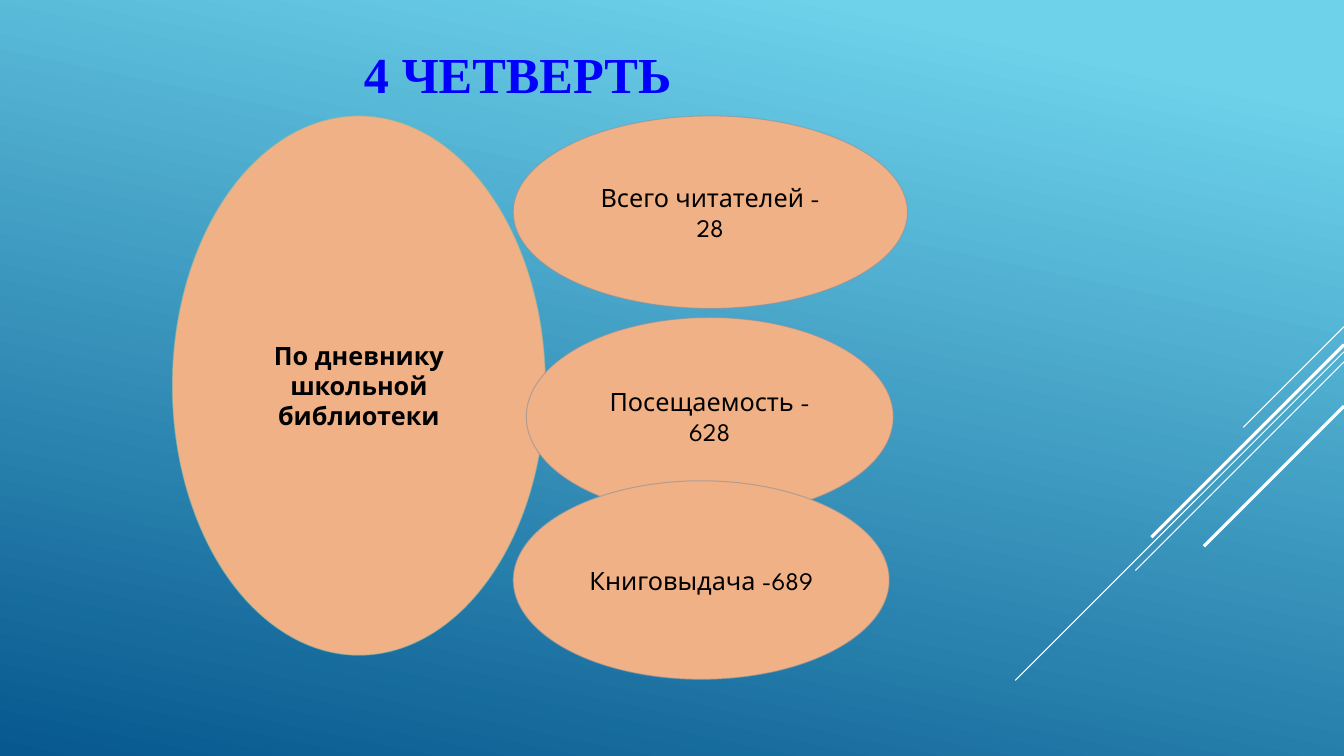
from dataclasses import dataclass

import pptx
import pptx.dml.color
import pptx.enum.shapes
import pptx.enum.text
import pptx.oxml.ns
import pptx.oxml.xmlchemy
import pptx.util
from pptx.util import Inches

COLORS = {
    "sky": "6ED2EB",
    "deep": "06588E",
    "white": "FFFFFF",
    "title": "0000FF",
    "peach": "F1B187",
    "sage": "8AB7A1",
    "gray": "89919C",
    "black": "000000",
}
SHAPES = pptx.enum.shapes.MSO_SHAPE
RIGHT_EDGE = 13.33


@dataclass
class Ray:
    """Diagonal line running down and left from the right edge."""
    top: float
    length: float
    weight: float


@dataclass
class Bubble:
    text: str
    left: float
    top: float
    width: float
    height: float
    kind: SHAPES = SHAPES.FLOWCHART_CONNECTOR
    outline: str = "gray"
    bold: bool = False


RAYS = [
    Ray(3.24, 1.0, 0.75),
    Ray(3.49, 3.26, 0.75),
    Ray(3.59, 2.07, 0.75),
    Ray(3.42, 1.91, 2.25),
    Ray(4.03, 1.39, 2.25),
]
BUBBLES = [
    Bubble("По дневнику школьной библиотеки", 1.71, 1.15, 3.7, 5.35,
           SHAPES.OVAL, "sage", True),
    Bubble("Посещаемость - 628", 5.22, 3.15, 3.64, 1.97),
    Bubble("Всего читателей -\v28", 5.09, 1.15, 3.91, 1.91),
    Bubble("Книговыдача -689", 5.09, 4.77, 3.73, 1.97),
]


def rgb(name: str) -> pptx.dml.color.RGBColor:
    return pptx.dml.color.RGBColor.from_string(COLORS[name])


def paint_background(s) -> None:
    fill = s.background.fill
    fill.gradient()
    fill.gradient_angle = 258
    stops = zip(fill.gradient_stops, ((0.1, "sky"), (1.0, "deep")))
    for stop, (position, color) in stops:
        stop.position = position
        stop.color.rgb = rgb(color)


def style_run(r, font: str, size: int, color: str, bold: bool) -> None:
    r.font.name = font
    r.font.size = pptx.util.Pt(size)
    r.font.color.rgb = rgb(color)
    r.font.bold = bold


def add_ray(s, ray: Ray) -> None:
    line = s.shapes.add_connector(
        pptx.enum.shapes.MSO_CONNECTOR.STRAIGHT,
        Inches(RIGHT_EDGE), Inches(ray.top),
        Inches(RIGHT_EDGE - ray.length), Inches(ray.top + ray.length))
    line.line.color.rgb = rgb("white")
    line.line.width = pptx.util.Pt(ray.weight)
    line._element.spPr.append(pptx.oxml.xmlchemy.OxmlElement("a:effectLst"))


def add_title(s, text: str) -> None:
    sp = s.shapes.title
    sp.left, sp.top = Inches(3.51), Inches(0.3)
    sp.width, sp.height = Inches(5.92), Inches(0.85)
    tf = sp.text_frame
    tf.text = text
    tf.vertical_anchor = pptx.enum.text.MSO_ANCHOR.MIDDLE
    p = tf.paragraphs[0]
    p.alignment = pptx.enum.text.PP_ALIGN.LEFT
    style_run(p.runs[0], "Times New Roman", 36, "title", True)


def add_bubble(s, bubble: Bubble) -> None:
    sp = s.shapes.add_shape(
        bubble.kind, Inches(bubble.left), Inches(bubble.top),
        Inches(bubble.width), Inches(bubble.height))
    sp.shadow.inherit = False
    sp.fill.solid()
    sp.fill.fore_color.rgb = rgb("peach")
    sp.line.color.rgb = rgb(bubble.outline)
    sp.line.width = pptx.util.Pt(0.75)
    outline = sp._element.spPr.find(
        "/".join(pptx.oxml.ns.qn(tag)
                 for tag in ("a:ln", "a:solidFill", "a:srgbClr")))
    alpha = pptx.oxml.xmlchemy.OxmlElement("a:alpha")
    alpha.set("val", "60000")
    outline.append(alpha)

    tf = sp.text_frame
    tf.word_wrap = True
    tf.vertical_anchor = pptx.enum.text.MSO_ANCHOR.MIDDLE
    p = tf.paragraphs[0]
    p.text = bubble.text
    p.alignment = pptx.enum.text.PP_ALIGN.CENTER
    for r in p.runs:
        style_run(r, "League Spartan", 18, "black", bubble.bold)


def main() -> None:
    prs = pptx.Presentation()
    prs.slide_width, prs.slide_height = Inches(RIGHT_EDGE), Inches(7.5)
    s = prs.slides.add_slide(prs.slide_layouts[5])
    paint_background(s)
    for ray in RAYS:
        add_ray(s, ray)
    add_title(s, "4 ЧЕТВЕРТЬ")
    for bubble in BUBBLES:
        add_bubble(s, bubble)
    prs.save("out.pptx")


if __name__ == "__main__":
    main()
